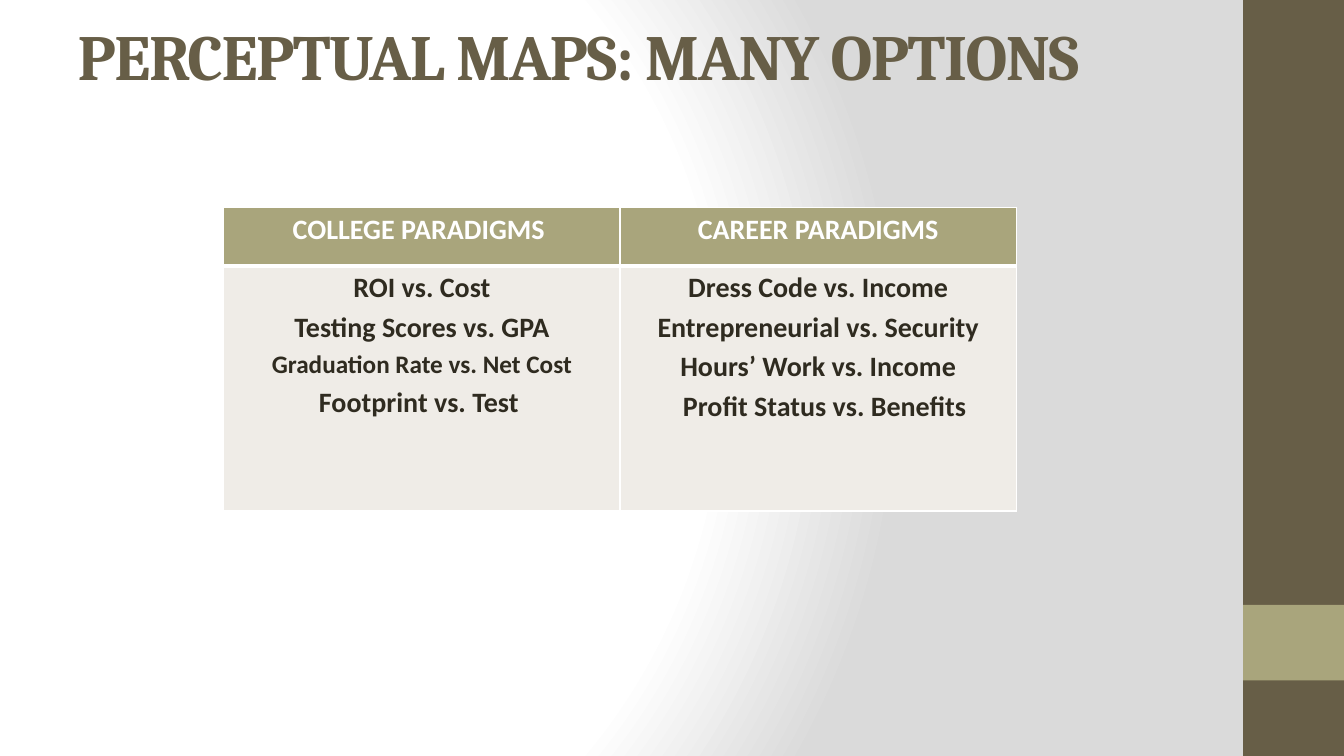
from lxml import etree
from pptx import Presentation
from pptx import util as u
from pptx.dml.color import RGBColor
from pptx.enum import shapes, text
from pptx.oxml import ns, parse_xml

COLORS = {
    "white": "FFFFFF", "grey": "DADADA", "brown": "675E47",
    "olive": "A9A57C", "cream": "EFECE7", "ink": "2F2B20",
}
TITLE = "PERCEPTUAL MAPS: MANY OPTIONS"
HEADINGS = ["COLLEGE PARADIGMS ", "CAREER PARADIGMS"]
COLLEGE = ["ROI vs. Cost", "Testing Scores vs. GPA",
           "Graduation Rate vs. Net Cost", "Footprint vs. Test "]
CAREER = ["Dress Code vs. Income", "Entrepreneurial vs. Security",
          "Hours’ Work vs. Income", "Profit Status vs. Benefits "]
SMALLER = {"Graduation Rate vs. Net Cost": 18}
INDENTED = {"Profit Status vs. Benefits ": 0.19}
ROW_HEIGHTS = [0.58, 2.43]


def color(name):
    return RGBColor.from_string(COLORS[name])


def apply_format(target, values):
    for name, value in values.items():
        setattr(target, name, value)


def format_span(span, face, size, ink):
    apply_format(span.font, {"name": face, "size": u.Pt(size), "bold": True})
    span.font.color.rgb = color(ink)


def paint_background(page):
    """Fill the page with a circular gradient from white to grey."""
    page.background.fill.solid()
    stops = "".join(
        f'<a:gs pos="{pos}"><a:srgbClr val="{COLORS[name]}"/></a:gs>'
        for pos, name in [(0, "white"), (75000, "white"), (100000, "grey")])
    gradient = parse_xml(
        f'<a:gradFill {ns.nsdecls("a")} rotWithShape="1"><a:gsLst>{stops}</a:gsLst>'
        '<a:path path="circle"><a:fillToRect l="20000" t="50000" r="100000" '
        'b="50000"/></a:path></a:gradFill>')
    solid = page.element.find(".//" + ns.qn("p:bgPr")).find(ns.qn("a:solidFill"))
    solid.getparent().replace(solid, gradient)


def add_bar(page, top, height, fill):
    bar = page.shapes.add_shape(
        shapes.MSO_SHAPE.RECTANGLE, u.Inches(12.33), u.Inches(top),
        u.Inches(1), u.Inches(height))
    bar.shadow.inherit = False
    bar.fill.solid()
    bar.fill.fore_color.rgb = color(fill)
    bar.line.fill.background()


def write_title(page):
    title = page.shapes.title
    apply_format(title, {"left": u.Inches(0.67), "top": u.Inches(0.16),
                         "width": u.Inches(11.11), "height": u.Inches(1.25)})
    frame = title.text_frame
    apply_format(frame, {"word_wrap": True, "margin_top": 0,
                         "auto_size": text.MSO_AUTO_SIZE.NONE,
                         "vertical_anchor": text.MSO_ANCHOR.TOP})
    para = frame.paragraphs[0]
    para.alignment = text.PP_ALIGN.LEFT
    span = para.add_run()
    span.text = TITLE
    format_span(span, "Cambria", 46, "brown")
    span.font._element.set("spc", "-100")


def set_borders(cell, widths):
    """Draw white borders; widths maps L, R, T and B to points."""
    properties = cell._tc.get_or_add_tcPr()
    for index, side in enumerate("LRTB"):
        line = etree.Element(ns.qn(f"a:ln{side}"), w=str(u.Pt(widths[side])))
        fill = etree.SubElement(line, ns.qn("a:solidFill"))
        etree.SubElement(fill, ns.qn("a:srgbClr"), val=COLORS["white"])
        properties.insert(index, line)


def fill_cell(cell, lines, fill, ink, widths):
    cell.fill.solid()
    cell.fill.fore_color.rgb = color(fill)
    apply_format(cell, {"margin_left": u.Inches(0.07), "margin_right": u.Inches(0.07),
                        "margin_top": 0, "margin_bottom": 0,
                        "vertical_anchor": text.MSO_ANCHOR.TOP})
    set_borders(cell, widths)
    frame = cell.text_frame
    for index, line in enumerate(lines):
        para = frame.add_paragraph() if index else frame.paragraphs[0]
        apply_format(para, {"alignment": text.PP_ALIGN.CENTER, "line_spacing": 1.15})
        if line in INDENTED:
            para._p.get_or_add_pPr().set("marL", str(u.Inches(INDENTED[line])))
        span = para.add_run()
        span.text = line
        format_span(span, "Calibri", SMALLER.get(line, 20), ink)


def add_paradigm_table(page):
    table = page.shapes.add_table(
        2, 2, u.Inches(2.22), u.Inches(2.06), u.Inches(7.86),
        u.Inches(sum(ROW_HEIGHTS))).table
    for row, height in zip(table.rows, ROW_HEIGHTS):
        row.height = u.Inches(height)
    thin = dict.fromkeys("LRTB", 1)
    for column, (heading, lines) in enumerate(zip(HEADINGS, [COLLEGE, CAREER])):
        fill_cell(table.cell(0, column), [heading], "olive", "white", {**thin, "B": 3})
        fill_cell(table.cell(1, column), lines, "cream", "ink", {**thin, "T": 3})


def main():
    deck = Presentation()
    apply_format(deck, {"slide_width": u.Inches(13.33), "slide_height": u.Inches(7.5)})
    page = deck.slides.add_slide(deck.slide_layouts.get_by_name("Title Only"))
    paint_background(page)
    add_bar(page, 0, 7.5, "brown")
    add_bar(page, 6, 0.75, "olive")
    write_title(page)
    add_paradigm_table(page)
    deck.save("out.pptx")


if __name__ == "__main__":
    main()
